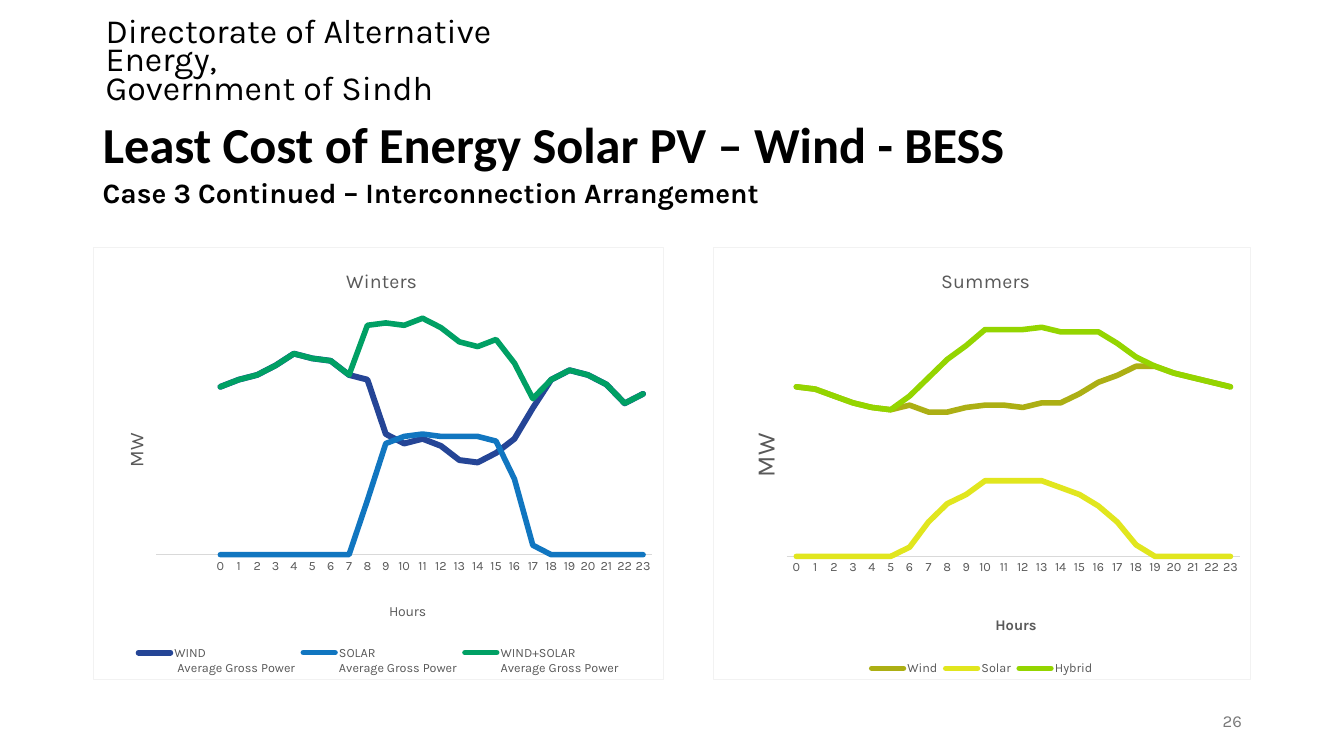
from lxml import etree
from pptx import Presentation
from pptx import util as u
from pptx.chart.data import CategoryChartData
from pptx.dml.color import RGBColor
from pptx.enum import chart as charts, text
from pptx.oxml import parse_xml
from pptx.oxml.ns import nsdecls, qn

GREY = "595959"
HOURS = [str(hour) for hour in range(24)]
WINTER_SERIES = [
    ("WIND\n Average Gross Power", "254596", 4.25,
     [None] * 3 + [71, 74, 76, 80, 85, 83, 82, 76, 74, 51, 47, 49, 46, 40, 39,
                   43, 49, 62, 74, 78, 76, 72, 64, 68]),
    ("SOLAR\nAverage Gross Power", "1176C0", 4,
     [None] * 3 + [0] * 8 + [23, 47, 50, 51, 50, 50, 50, 48, 32, 4] + [0] * 6),
    ("WIND+SOLAR\nAverage Gross Power", "00A064", 4,
     [None] * 3 + [71, 74, 76, 80, 85, 83, 82, 76, 97, 98, 97, 100, 96, 90, 88,
                   91, 81, 66, 74, 78, 76, 72, 64, 68]),
]
SUMMER_SERIES = [
    ("Wind", "ACAF14", 4,
     [74, 73, 70, 67, 65, 64, 66, 63, 63, 65, 66, 66, 65, 67, 67, 71, 76, 79,
      83, 83, 80, 78, 76, 74]),
    ("Solar", "E1E61E", 4,
     [0] * 6 + [4, 15, 23, 27, 33, 33, 33, 33, 30, 27, 22, 15, 5] + [0] * 5),
    ("Hybrid", "94D500", 4,
     [74, 73, 70, 67, 65, 64, 70, 78, 86, 92, 99, 99, 99, 100, 98, 98, 98, 93,
      87, 83, 80, 78, 76, 74]),
]


def color(value):
    return RGBColor.from_string(value)


def format_font(font, size, fill="000000", name="Karla", bold=False):
    font.size = u.Pt(size)
    font.name = name
    font.bold = bold
    font.color.rgb = color(fill)


def write_text(frame, lines, align=text.PP_ALIGN.LEFT, spacing=1,
               anchor=text.MSO_ANCHOR.MIDDLE, **font_format):
    frame.word_wrap = True
    frame.auto_size = text.MSO_AUTO_SIZE.NONE
    frame.vertical_anchor = anchor
    for index, line in enumerate(lines):
        paragraph = frame.add_paragraph() if index else frame.paragraphs[0]
        paragraph.alignment = align
        paragraph.line_spacing = spacing
        run = paragraph.add_run()
        run.text = line
        format_font(run.font, **font_format)


def add_text(slide, position, lines, **text_format):
    box = slide.shapes.add_textbox(*map(u.Cm, position))
    write_text(box.text_frame, lines, **text_format)


def place(element, index, **fractions):
    for old_layout in element.findall(qn("c:layout")):
        element.remove(old_layout)
    layout = parse_xml(f'<c:layout {nsdecls("c")}><c:manualLayout/></c:layout>')
    if "w" in fractions:
        etree.SubElement(layout[0], qn("c:layoutTarget")).set("val", "inner")
    for side in "xy":
        etree.SubElement(layout[0], qn(f"c:{side}Mode")).set("val", "edge")
    for key, value in fractions.items():
        etree.SubElement(layout[0], qn(f"c:{key}")).set("val", str(value))
    element.insert(index, layout)


def write_chart_title(title, words, position, **font_format):
    run = title.text_frame.paragraphs[0].add_run()
    run.text = words
    format_font(run.font, fill=GREY, **font_format)
    place(title._element, 1, x=position[0], y=position[1])


def add_border(chart):
    border = parse_xml(
        f'<c:spPr {nsdecls("c", "a")}><a:noFill/><a:ln w="9525"><a:solidFill>'
        '<a:srgbClr val="F2F2F2"/></a:solidFill></a:ln></c:spPr>')
    chart._chartSpace.find(qn("c:chart")).addnext(border)


def format_axes(chart):
    hours, power = chart.category_axis, chart.value_axis
    hours.major_tick_mark = charts.XL_TICK_MARK.NONE
    hours.has_major_gridlines = False
    hours.format.line.color.rgb = color("D9D9D9")
    hours.format.line.width = u.Pt(0.75)
    format_font(hours.tick_labels.font, 9, GREY)
    power.minimum_scale = 0
    power.maximum_scale = 100
    power.has_major_gridlines = False
    power.visible = False
    if power._element.find(qn("c:crossBetween")) is None:
        between = parse_xml(f'<c:crossBetween {nsdecls("c")} val="between"/>')
        power._element.find(qn("c:crosses")).addnext(between)


def add_line_chart(slide, position, categories, series_list, plot):
    data = CategoryChartData(number_format="0")
    data.categories = categories
    for name, _, _, values in series_list:
        data.add_series(name, values)
    frame = slide.shapes.add_chart(
        charts.XL_CHART_TYPE.LINE, *map(u.Cm, position), data)
    chart = frame.chart
    format_font(chart.font, 10)
    add_border(chart)
    format_axes(chart)
    chart.plots[0].vary_by_categories = False
    place(chart._chartSpace.find(".//" + qn("c:plotArea")), 0, **plot)
    for series, (_, fill, width, _) in zip(chart.plots[0].series, series_list):
        series.smooth = False
        series.format.line.color.rgb = color(fill)
        series.format.line.width = u.Pt(width)
        series._element.find(".//" + qn("a:ln")).set("cap", "rnd")
    chart.has_legend = True
    chart.legend.position = charts.XL_LEGEND_POSITION.BOTTOM
    chart.legend.include_in_layout = False
    format_font(chart.legend.font, 9, GREY)
    return chart


def add_titles(chart, season, season_at, hours_at, power_at, hours_font, power_size):
    chart.has_title = True
    write_chart_title(chart.chart_title, season, season_at, size=14)
    write_chart_title(chart.category_axis.axis_title, "Hours", hours_at, **hours_font)
    power_title = chart.value_axis.axis_title
    write_chart_title(power_title, "MW", power_at, size=power_size)
    body = power_title._element.find(".//" + qn("a:bodyPr"))
    body.set("rot", "-5400000")
    body.set("vert", "horz")


def main():
    presentation = Presentation()
    presentation.slide_width = u.Cm(33.87)
    presentation.slide_height = u.Cm(19.05)
    slide = presentation.slides.add_slide(presentation.slide_layouts[5])

    add_text(slide, (2.41, 0.61, 11.79, 1.96),
             ["Directorate of Alternative Energy,", "Government of Sindh"],
             size=24.2, spacing=0.7)
    title = slide.shapes.title
    title.left, title.top, title.width, title.height = map(
        u.Cm, (2.34, 2.74, 29.21, 1.96))
    write_text(title.text_frame, ["Least Cost of Energy Solar PV – Wind - BESS"],
               size=36, name="Calibri", bold=True, spacing=0.9)
    add_text(slide, (2.34, 4.29, 23.06, 1.12),
             ["Case 3 Continued – Interconnection Arrangement"],
             size=20, bold=True, anchor=text.MSO_ANCHOR.TOP)

    winters = add_line_chart(
        slide, (2.34, 6.22, 14.4, 10.92), [""] * 3 + HOURS, WINTER_SERIES,
        {"x": 0.11, "y": 0.164, "w": 0.87, "h": 0.547})
    add_titles(winters, "Winters", (0.437, 0.04), (0.514, 0.815), (0.046, 0.42),
               {"size": 10}, 14)
    summers = add_line_chart(
        slide, (17.98, 6.22, 13.54, 10.92), HOURS, SUMMER_SERIES,
        {"x": 0.136, "y": 0.185, "w": 0.845, "h": 0.53})
    add_titles(summers, "Summers", (0.417, 0.04), (0.52, 0.845), (0.056, 0.42),
               {"size": 10.5, "bold": True}, 18)

    add_text(slide, (23.93, 17.65, 7.62, 1.02), ["26"], size=12, fill="797979",
             align=text.PP_ALIGN.RIGHT)
    presentation.save("out.pptx")


if __name__ == "__main__":
    main()
